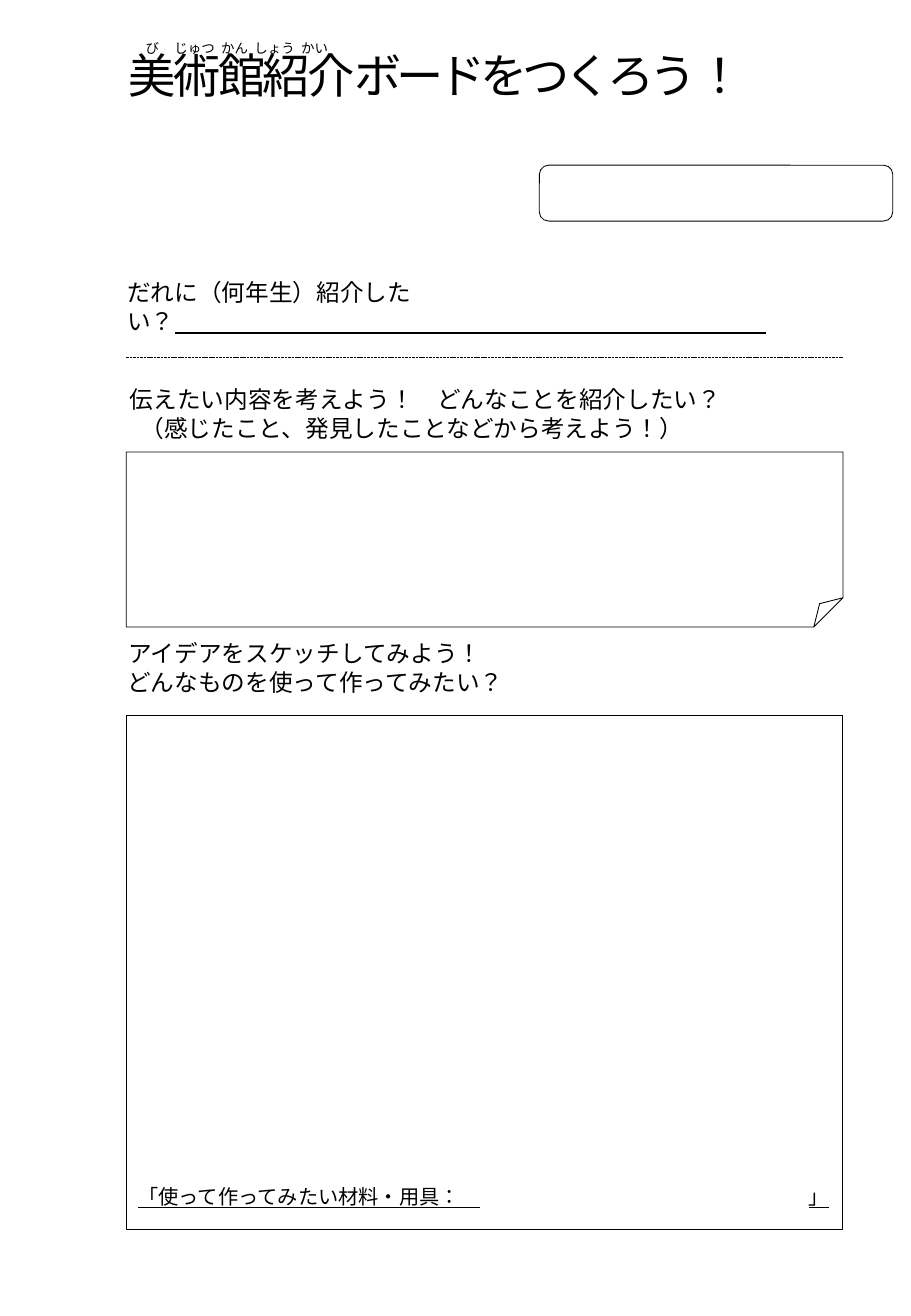
import pptx
import pptx.dml.color
import pptx.enum.dml
import pptx.enum.lang
import pptx.enum.shapes
import pptx.enum.text
import pptx.oxml.ns
import pptx.util
from lxml import etree

Inches = pptx.util.Inches
SHAPES = pptx.enum.shapes.MSO_SHAPE
FONT = "Noto Sans CJK JP"
INK = "000000"
PAPER = "FFFFFF"
MARGIN, WIDTH = 1.04, 5.9


def color(value):
    return pptx.dml.color.RGBColor.from_string(value)


def add_run(paragraph, text, size, spacing=0, underline=None):
    run = paragraph.add_run()
    run.text = text
    values = {"name": FONT, "size": pptx.util.Pt(size), "underline": underline,
              "language_id": pptx.enum.lang.MSO_LANGUAGE_ID.JAPANESE}
    for name, value in values.items():
        setattr(run.font, name, value)
    run.font.color.rgb = color(INK)
    properties = run.font._element
    east_asian = etree.SubElement(properties, pptx.oxml.ns.qn("a:ea"))
    east_asian.set("typeface", FONT)
    if spacing:
        properties.set("spc", str(int(spacing * 100)))


def add_text(slide, box, lines, size, indents=(0,), wrap=True):
    """Each line is a list of (text, letter spacing, underline) runs."""
    frame = slide.shapes.add_textbox(*map(Inches, box)).text_frame
    frame.word_wrap = wrap
    for index, (line, indent) in enumerate(zip(lines, indents)):
        paragraph = frame.add_paragraph() if index else frame.paragraphs[0]
        properties = paragraph._p.get_or_add_pPr()
        properties.set("marL", str(Inches(indent)))
        properties.set("indent", "0")
        for text, spacing, underline in line:
            add_run(paragraph, text, size, spacing, underline)
    return frame.paragraphs[0]


def plain(text):
    return [(text, 0, None)]


def add_frame(slide, kind, box, fill=None):
    shape = slide.shapes.add_shape(kind, *map(Inches, box))
    shape.shadow.inherit = False
    if fill:
        shape.fill.solid()
        shape.fill.fore_color.rgb = color(fill)
    else:
        shape.fill.background()
    shape.line.color.rgb = color(INK)
    shape.line.width = pptx.util.Pt(0.5)


def add_rule(slide, left, right, y, width, dash=None):
    rule = slide.shapes.add_connector(pptx.enum.shapes.MSO_CONNECTOR.STRAIGHT,
                                      *map(Inches, (left, y, right, y)))
    etree.SubElement(rule._element.spPr, pptx.oxml.ns.qn("a:effectLst"))
    rule.line.color.rgb = color(INK)
    rule.line.width = pptx.util.Pt(width)
    rule.line.dash_style = dash


def build_heading(slide, left, top):
    # Title
    title = slide.shapes.title
    box = {"left": left, "top": top, "width": 6.35, "height": 0.57}
    for name, value in box.items():
        setattr(title, name, Inches(value))
    frame = title.text_frame
    values = {"word_wrap": True, "auto_size": pptx.enum.text.MSO_AUTO_SIZE.NONE,
              "vertical_anchor": pptx.enum.text.MSO_ANCHOR.TOP}
    for name, value in values.items():
        setattr(frame, name, value)
    paragraph = frame.paragraphs[0]
    paragraph.alignment = pptx.enum.text.PP_ALIGN.LEFT
    for text, spacing in (("美術館紹介", -1.5), ("ボードをつくろう", -3), ("！", 0)):
        add_run(paragraph, text, 28, spacing)
    # Readings above the title, with widened spaces between them
    readings = plain("び")
    for reading, gap in (("じゅつ", 7.2), ("かん", 1.8), ("しょう", 1.8), ("かい", 1.8)):
        readings += [(" ", gap, None)] + plain(reading)
    add_text(slide, (left + 0.14, top - 0.05, 1.95, 0.24), [readings], 8)
    # Name field
    add_frame(slide, SHAPES.ROUNDED_RECTANGLE, (left + 3.48, top + 1.03, 2.91, 0.46))


def build_audience(slide, left, top):
    # Question with a blank to fill in
    paragraph = add_text(slide, (left - 0.09, top, 6.21, 0.34),
                         [plain("だれに（何年生）紹介した")], 14)
    paragraph.add_line_break()
    add_run(paragraph, "い？", 14)
    add_rule(slide, left + 0.4, left + 5.27, top + 0.5, 1.2)
    # Dashed divider
    add_rule(slide, left, left + WIDTH, top + 0.7, 0.5, pptx.enum.dml.MSO_LINE.SQUARE_DOT)


def build_content(slide, left, top):
    # Prompt and note area
    add_text(slide, (left - 0.37, top, 7.44, 0.57),
             [plain("伝えたい内容を考えよう！　どんなことを紹介したい？"),
              plain("（感じたこと、発見したことなどから考えよう！）")], 14, indents=(0.3, 0.39))
    add_frame(slide, SHAPES.FOLDED_CORNER, (left, top + 0.6, WIDTH, 1.44))


def build_sketch(slide, left, top):
    # Sketch area
    add_frame(slide, SHAPES.RECTANGLE, (left, top + 0.68, WIDTH, 4.23), PAPER)
    # Prompts
    add_text(slide, (left - 0.09, top + 0.24, 3.34, 0.34),
             [plain("どんなものを使って作ってみたい？")], 14, wrap=False)
    add_text(slide, (left - 0.08, top, 3.34, 0.34),
             [plain("アイデアをスケッチしてみよう！")], 14, wrap=False)
    # Materials line with a widened space as the blank
    add_text(slide, (left, top + 4.49, 6.06, 0.3),
             [[("「使って作ってみたい材料・用具：", 0, True), ("　", 194.7, True),
               ("」", 0, True)]], 12)


def main():
    presentation = pptx.Presentation()
    presentation.slide_width = Inches(7.5)
    presentation.slide_height = Inches(10.83)
    slide = presentation.slides.add_slide(presentation.slide_layouts[5])
    build_heading(slide, 0.96, 0.33)
    build_audience(slide, MARGIN, 2.24)
    build_content(slide, MARGIN, 3.12)
    build_sketch(slide, MARGIN, 5.21)
    presentation.save("out.pptx")


if __name__ == "__main__":
    main()
